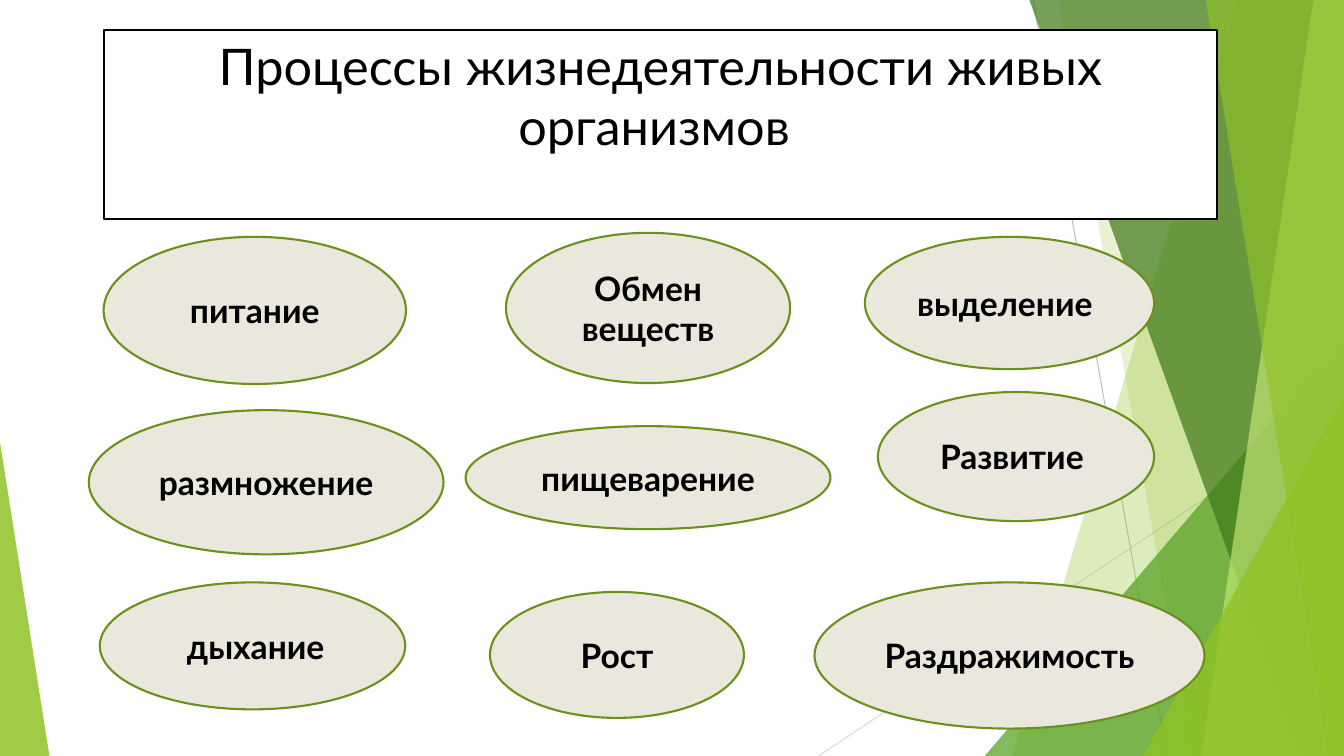
from lxml import etree
from pptx import Presentation
from pptx.dml.color import RGBColor
from pptx.enum import shapes, text
from pptx.oxml.ns import qn
from pptx.util import Pt

WIDTH, HEIGHT = 960, 540
FONT = "Lato"
COLORS = {
    "white": "FFFFFF", "black": "000000", "beige": "EAE8DC", "olive": "6B901C",
    "lime": "90C226", "pale lime": "C0E474", "green": "54A021",
    "dark green": "3F7819", "gray": "BFBFBF", "light gray": "D9D9D9",
}
CENTER, LEFT = text.PP_ALIGN.CENTER, text.PP_ALIGN.LEFT

TITLE = "Процессы жизнедеятельности живых организмов "
TITLE_BOX = (74, 21.4, 795.6, 135)

# Start, end, color
THIN_LINES = [
    ((738, 0), (833.8, HEIGHT), "gray"),
    ((WIDTH, 290), (584.6, HEIGHT), "light gray"),
]
# Panels reach the right edge: top-left x, bottom-left x, color, opacity.
# Triangles: box, apex position, color, opacity.
DECORATION = [
    ("panel", 884.2, 722.9, "lime", 30),
    ("panel", 756, 851.8, "lime", 20),
    ("triangle", (703.4, 240, 256.6, 300), 1, "green", 72),
    ("panel", 735.1, 929.5, "dark green", 70),
    ("panel", 938.2, 858.2, "pale lime", 70),
    ("panel", 861.1, 949, "lime", 65),
    ("triangle", (816.5, 283, 143.5, 257), 1, "lime", 80),
    ("triangle", (0, 316, 35.3, 224), 0, "lime", 85),
]
# Box, alignment, runs as (text, size, color, bold)
PROCESSES = [
    ((71.3, 416, 218.2, 90.7), CENTER,
     [(" ", 18, "white", False), ("дыхание", 24, "black", True)]),
    ((74, 169.2, 216, 105.1), CENTER, [("питание", 24, "black", True)]),
    ((63.4, 293, 253.4, 103), CENTER, [("размножение", 24, "black", True)]),
    ((617.8, 169.2, 206.6, 94.5), LEFT, [("выделение", 24, "black", True)]),
    ((350, 422.8, 181.4, 90), CENTER, [("Рост", 24, "black", True)]),
    ((627.1, 280, 197.3, 92.2), CENTER, [("Развитие ", 24, "black", True)]),
    ((361.4, 166.3, 203, 107.3), CENTER, [("Обмен веществ", 24, "black", True)]),
    ((581.8, 416, 278.6, 104.4), CENTER, [("Раздражимость", 24, "black", True)]),
    ((332.6, 304.4, 260.6, 73.6), CENTER, [("пищеварение", 24, "black", True)]),
]


def rgb(name):
    return RGBColor.from_string(COLORS[name])


def points(values):
    return [Pt(value) for value in values]


def paint(shape, fill, opacity=100, line=None):
    """Set fill, opacity in percent, and an optional outline."""
    shape.shadow.inherit = False
    shape.fill.solid()
    shape.fill.fore_color.rgb = rgb(fill)
    if opacity < 100:
        color = shape.fill._xPr.find(qn("a:solidFill"))[0]
        etree.SubElement(color, qn("a:alpha"), val=str(opacity * 1000))
    if line:
        shape.line.color.rgb = rgb(line)
        shape.line.width = Pt(1.5)
    else:
        shape.line.fill.background()


def add_thin_line(slide, start, end, color):
    connector = slide.shapes.add_connector(
        shapes.MSO_CONNECTOR.STRAIGHT, *points(start + end))
    connector.line.color.rgb = rgb(color)
    connector.line.width = Pt(0.75)
    etree.SubElement(connector._element.spPr, qn("a:effectLst"))


def add_panel(slide, top_x, bottom_x, color, opacity):
    builder = slide.shapes.build_freeform(Pt(top_x), Pt(-0.6))
    corners = [(WIDTH, -0.6), (WIDTH, HEIGHT), (bottom_x, HEIGHT)]
    builder.add_line_segments([points(corner) for corner in corners], close=True)
    paint(builder.convert_to_shape(), color, opacity)


def add_triangle(slide, box, apex, color, opacity):
    triangle = slide.shapes.add_shape(
        shapes.MSO_SHAPE.ISOSCELES_TRIANGLE, *points(box))
    triangle.adjustments[0] = apex
    paint(triangle, color, opacity)


def add_label(slide, kind, box, fill, line, anchor, alignment, runs):
    shape = slide.shapes.add_shape(kind, *points(box))
    paint(shape, fill, line=line)
    frame = shape.text_frame
    frame.word_wrap = True
    frame.vertical_anchor = anchor
    paragraph = frame.paragraphs[0]
    paragraph.alignment = alignment
    for words, size, color, bold in runs:
        run = paragraph.add_run()
        run.text = words
        run.font.name = FONT
        run.font.size = Pt(size)
        run.font.bold = bold
        run.font.color.rgb = rgb(color)


def main():
    presentation = Presentation()
    presentation.slide_width, presentation.slide_height = Pt(WIDTH), Pt(HEIGHT)
    slide = presentation.slides.add_slide(presentation.slide_layouts[6])

    for thin_line in THIN_LINES:
        add_thin_line(slide, *thin_line)
    builders = {"panel": add_panel, "triangle": add_triangle}
    for kind, *details in DECORATION:
        builders[kind](slide, *details)

    add_label(slide, shapes.MSO_SHAPE.RECTANGLE, TITLE_BOX, "white", "black",
              text.MSO_ANCHOR.TOP, CENTER, [(TITLE, 36, "black", False)])
    for box, alignment, runs in PROCESSES:
        add_label(slide, shapes.MSO_SHAPE.OVAL, box, "beige", "olive",
                  text.MSO_ANCHOR.MIDDLE, alignment, runs)

    presentation.save("out.pptx")


if __name__ == "__main__":
    main()
